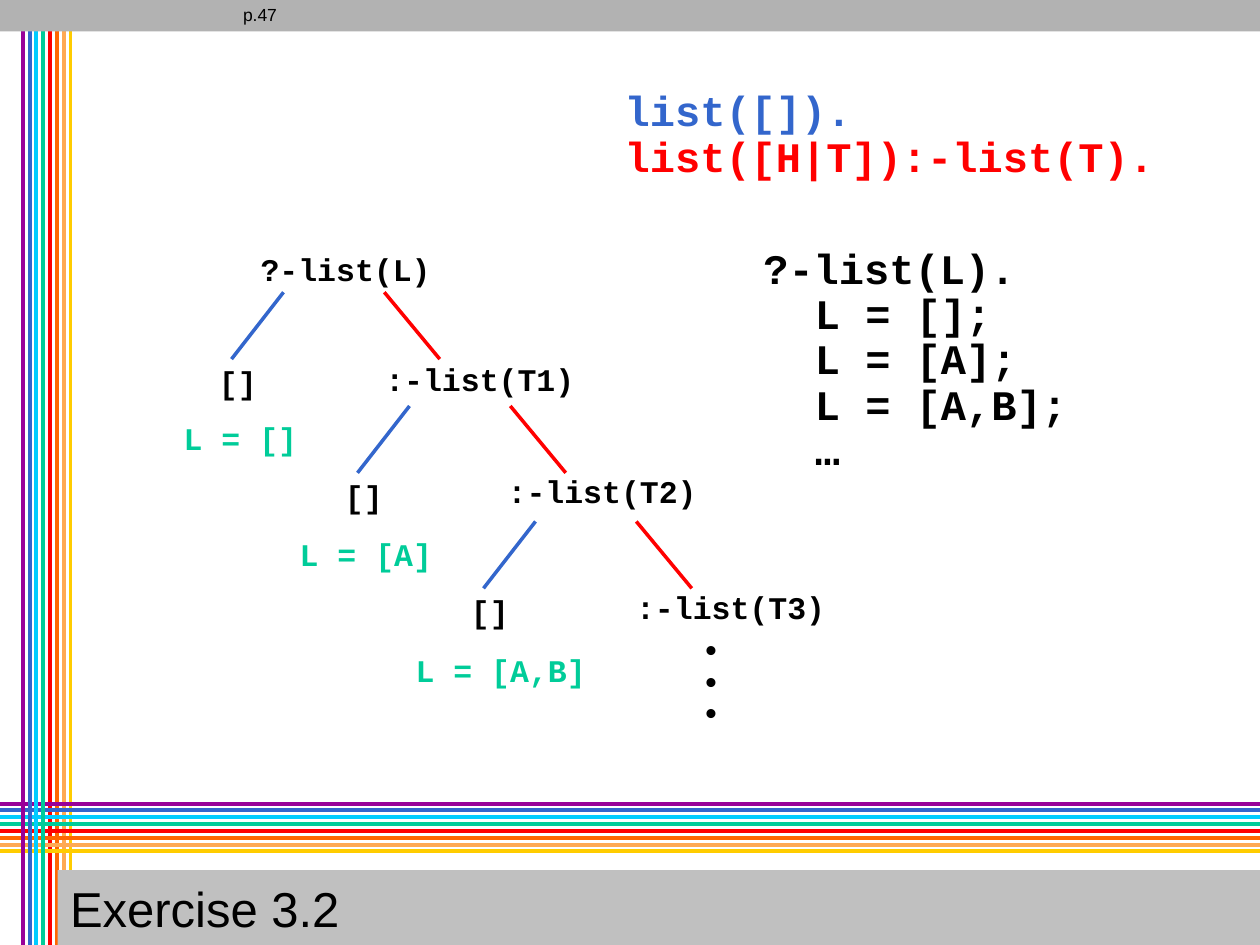
from pptx import Presentation
from pptx.dml.color import RGBColor
from pptx.enum.shapes import MSO_CONNECTOR, MSO_SHAPE
from pptx.enum.text import MSO_ANCHOR, PP_ALIGN
from pptx.oxml.ns import qn
from pptx.util import Pt
from lxml.etree import SubElement

BLACK, BLUE, RED, GREEN = "000000", "3366CC", "FF0000", "00CC99"
STRIPES = ["990099", BLUE, "00CCFF", GREEN, RED, "FF6600", "FFA953", "FFCC00"]
STRIPE_GAP = 3.9


def color(value):
    return RGBColor.from_string(value)


class SlideWriter:
    code = {"name": "Courier New", "size": Pt(18), "bold": True}
    big_code = {"name": "Courier New", "size": Pt(24), "bold": True}
    label = {"name": "Arial", "size": Pt(10), "bold": False}
    title = {"name": "Arial", "size": Pt(28), "bold": False}

    def __init__(self, s):
        self.s = s

    def line(self, x1, y1, x2, y2, stroke, width=2):
        ln = self.s.shapes.add_connector(
            MSO_CONNECTOR.STRAIGHT, Pt(x1), Pt(y1), Pt(x2), Pt(y2))
        ln.line.color.rgb = color(stroke)
        ln.line.width = Pt(width)
        SubElement(ln._element.spPr, qn("a:effectLst"))

    def bar(self, x, y, w, h, fill):
        sp = self.s.shapes.add_shape(MSO_SHAPE.RECTANGLE, Pt(x), Pt(y), Pt(w), Pt(h))
        sp.shadow.inherit = False
        sp.fill.solid()
        sp.fill.fore_color.rgb = color(fill)
        sp.line.fill.background()
        return sp

    def run(self, p, text, style, fill=BLACK):
        r = p.add_run()
        r.text = text
        for name, value in style.items():
            setattr(r.font, name, value)
        r.font.color.rgb = color(fill)

    def text(self, x, y, w, h, paragraphs, style, hanging=0):
        sp = self.s.shapes.add_textbox(Pt(x), Pt(y), Pt(w), Pt(h))
        tf = sp.text_frame
        tf.word_wrap = hanging > 0
        for i, (lines, fill) in enumerate(paragraphs):
            p = tf.add_paragraph() if i else tf.paragraphs[0]
            p.line_spacing = 0.9
            if hanging:
                pPr = p._p.get_or_add_pPr()
                pPr.set("marL", str(Pt(hanging)))
                pPr.set("indent", str(-Pt(hanging)))
            for j, line in enumerate(lines):
                if j:
                    p.add_line_break()
                self.run(p, line, style, fill)

    def node(self, x, y, text, fill=BLACK):
        width = 10.8 * len(text) + 14.4
        self.text(x, y, width, 26.6, [([text], fill)], self.code)

    def heading(self, sp, text):
        tf = sp.text_frame
        tf.vertical_anchor = MSO_ANCHOR.MIDDLE
        p = tf.paragraphs[0]
        p.alignment = PP_ALIGN.LEFT
        self.run(p, text, self.title)

    def stripes_down(self, indexes):
        for i in indexes:
            x = 13 + STRIPE_GAP * i
            self.line(x, 0, x, 540, STRIPES[i], 2.25)

    def stripes_across(self):
        for i, stroke in enumerate(STRIPES):
            y = 459.2 + STRIPE_GAP * i
            self.line(720, y, 0, y, stroke, 2.25)


def main():
    prs = Presentation()
    prs.slide_width, prs.slide_height = Pt(720), Pt(540)
    w = SlideWriter(prs.slides.add_slide(prs.slide_layouts[6]))

    w.stripes_down(range(4, 8))
    w.stripes_across()
    w.stripes_down(range(4))
    w.bar(0, 0, 720, 18, "B2B2B2")
    w.heading(w.bar(33, 497.2, 687, 43, "C0C0C0"), "Exercise 3.2")
    w.text(131.8, 0, 54.7, 18, [(["p.47"], BLACK)], w.label)

    w.node(141.8, 141.8, "?-list(L)")
    levels = [
        (167, 213.1, 204.5, ":-list(T1)", "L = []"),
        (232, 283, 268.6, ":-list(T2)", "L = [A]"),
        (298, 356.4, 334.8, ":-list(T3)", "L = [A,B]"),
    ]
    for i, (top, goal_x, goal_y, goal, answer) in enumerate(levels):
        x = 72 * i
        w.line(x + 251.3, top + 38.2, x + 219.6, top, RED)
        w.line(x + 132.3, top + 38.2, x + 162, top, BLUE)
        w.node(goal_x, goal_y, goal)
        w.node(x + 118, top + 39.3, "[]")
        w.node(97.9 + 66.25 * i, 238.3 + 66.25 * i, answer, GREEN)
    for i in range(3):
        w.node(393.8, 358.8 + 18.2 * i, "•")

    w.text(349.9, 48.2, 376.6, 59, [
        (["list([])."], BLUE),
        (["list([H|T]):-list(T)."], RED),
    ], w.big_code, 29.5)
    w.text(429.1, 138.2, 218.2, 136.8, [
        (["?-list(L).", "L = [];", "L = [A];", "L = [A,B];", "…"], BLACK),
    ], w.big_code, 29.5)

    prs.save("out.pptx")


if __name__ == "__main__":
    main()
